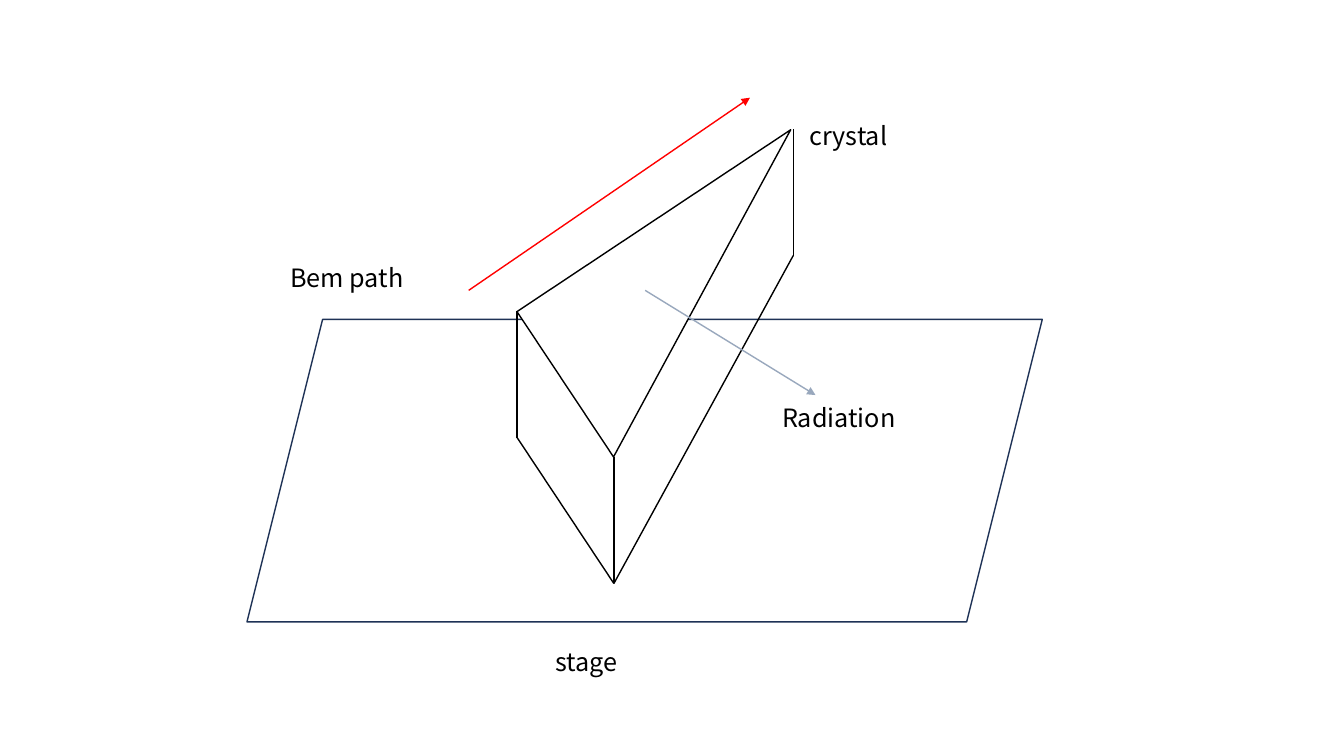
from dataclasses import dataclass
from typing import Any, NamedTuple

from lxml.etree import SubElement
from pptx import Presentation
from pptx.dml.color import RGBColor
from pptx.enum.shapes import MSO_CONNECTOR, MSO_SHAPE
from pptx.enum.text import MSO_ANCHOR, MSO_AUTO_SIZE
from pptx.oxml.ns import qn
from pptx.util import Pt

BLACK = RGBColor(0x00, 0x00, 0x00)
WHITE = RGBColor(0xFF, 0xFF, 0xFF)
NAVY = RGBColor(0x1E, 0x32, 0x56)
RED = RGBColor(0xFF, 0x00, 0x00)
GREY_BLUE = RGBColor(0x99, 0xA8, 0xBD)

LINE_WIDTH = 1
LABEL_WIDTH, LABEL_HEIGHT = 98, 29
LABEL_FONT = {"name": "Noto Sans CJK KR", "size": Pt(18)}
LABEL_FRAME = {
    "word_wrap": True,
    "auto_size": MSO_AUTO_SIZE.SHAPE_TO_FIT_TEXT,
    "vertical_anchor": MSO_ANCHOR.TOP,
}


class Point(NamedTuple):
    x: float
    y: float


@dataclass(frozen=True)
class Face:
    preset: MSO_SHAPE
    corner: Point
    width: float
    height: float
    outline: RGBColor
    rotation: float = 0


@dataclass(frozen=True)
class Ray:
    start: Point
    end: Point
    color: RGBColor = BLACK
    arrow: bool = False


@dataclass(frozen=True)
class Label:
    text: str
    corner: Point


STAGE = Face(MSO_SHAPE.PARALLELOGRAM, Point(176.4, 228.2), 568.1, 216, NAVY)
CRYSTAL_TOP = Face(MSO_SHAPE.RIGHT_TRIANGLE, Point(439.2, 92.2), 124.6, 234.7, BLACK, 56.4)

# Upper corners of the crystal; the lower ones lie straight below
LEFT, FRONT, BACK = Point(369.4, 222.2), Point(438.5, 326.4), Point(566.6, 92.2)
CRYSTAL_DEPTH = 90.4

BEAM = Ray(Point(334.8, 207.4), Point(535.7, 69.8), RED, True)
RADIATION = Ray(Point(460.8, 207.4), Point(582.5, 282.2), GREY_BLUE, True)

LABELS = [
    Label("Bem path", Point(200.2, 183.6)),
    Label("stage", Point(389.5, 457.9)),
    Label("crystal", Point(571, 82.1)),
    Label("Radiation", Point(551.5, 283.7)),
]


def below(corner: Point) -> Point:
    return Point(corner.x, corner.y + CRYSTAL_DEPTH)


def set_attributes(target: Any, values: dict[str, Any]) -> None:
    for attribute, value in values.items():
        setattr(target, attribute, value)


def draw_face(shapes: Any, face: Face) -> None:
    surface = shapes.add_shape(
        face.preset, Pt(face.corner.x), Pt(face.corner.y), Pt(face.width), Pt(face.height)
    )
    surface.rotation = face.rotation
    surface.shadow.inherit = False
    surface.fill.solid()
    surface.fill.fore_color.rgb = WHITE
    surface.line.color.rgb = face.outline
    surface.line.width = Pt(LINE_WIDTH)


def draw_ray(shapes: Any, ray: Ray) -> None:
    stroke = shapes.add_connector(
        MSO_CONNECTOR.STRAIGHT,
        Pt(ray.start.x), Pt(ray.start.y), Pt(ray.end.x), Pt(ray.end.y),
    )
    stroke.line.color.rgb = ray.color
    stroke.line.width = Pt(LINE_WIDTH)
    if ray.arrow:
        SubElement(stroke.line._get_or_add_ln(), qn("a:tailEnd"), type="triangle")
    SubElement(stroke._element.spPr, qn("a:effectLst"))


def draw_label(shapes: Any, label: Label) -> None:
    caption = shapes.add_textbox(
        Pt(label.corner.x), Pt(label.corner.y), Pt(LABEL_WIDTH), Pt(LABEL_HEIGHT)
    )
    set_attributes(caption.text_frame, LABEL_FRAME)
    wording = caption.text_frame.paragraphs[0].add_run()
    wording.text = label.text
    set_attributes(wording.font, LABEL_FONT)
    wording.font.color.rgb = BLACK


def main() -> None:
    deck = Presentation()
    deck.slide_width, deck.slide_height = Pt(960), Pt(540)
    slide = deck.slides.add_slide(deck.slide_layouts[6])

    # Stage
    draw_face(slide.shapes, STAGE)

    # Crystal: top face, upright edges, lower edges
    crystal = slide.shapes.add_group_shape()
    draw_face(crystal.shapes, CRYSTAL_TOP)
    for corner in (LEFT, FRONT, BACK):
        draw_ray(crystal.shapes, Ray(corner, below(corner)))
    for corner in (LEFT, BACK):
        draw_ray(crystal.shapes, Ray(below(corner), below(FRONT)))

    # Beam and radiation arrows
    for ray in (BEAM, RADIATION):
        draw_ray(slide.shapes, ray)

    # Labels
    for label in LABELS:
        draw_label(slide.shapes, label)

    deck.save("out.pptx")


if __name__ == "__main__":
    main()
